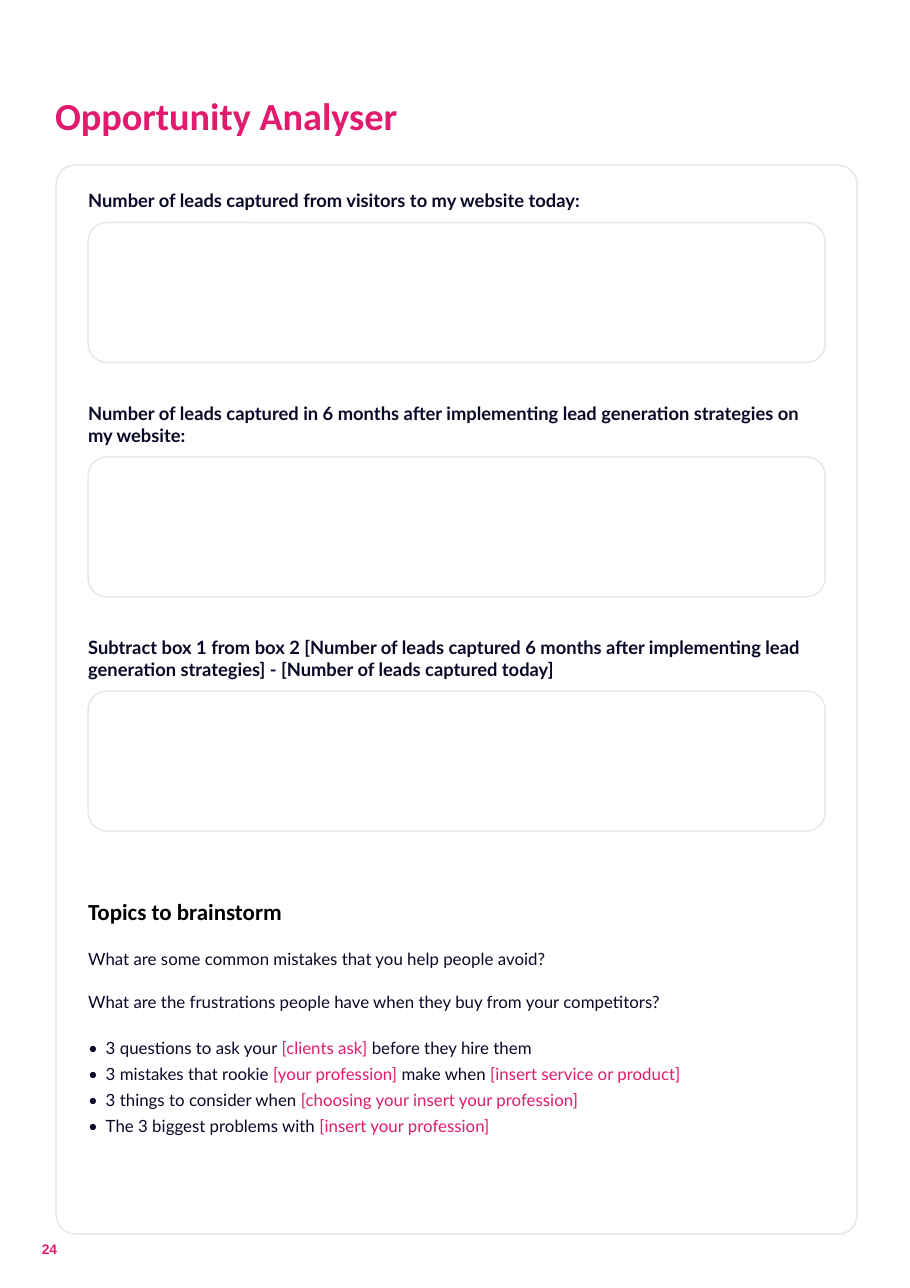
from dataclasses import dataclass

from lxml import etree
from pptx import Presentation
from pptx import util as u
from pptx.dml.color import RGBColor
from pptx.enum import shapes, text
from pptx.oxml.ns import qn

TITLE_ONLY = 5


@dataclass(frozen=True)
class Theme:
    pink: str = "E21B6F"
    navy: str = "080827"
    black: str = "000000"
    outline: str = "ECE6E6"
    heading_font: str = "Calibri"
    body_font: str = "Lato"
    number_font: str = "Arial"
    title_size: float = 25
    heading_size: float = 15
    label_size: float = 12
    body_size: float = 11
    number_size: float = 9
    corner: float = 0.17


THEME = Theme()

QUESTIONS = [
    "Number of leads captured from visitors to my website today:",
    "Number of leads captured in 6 months after implementing lead generation strategies on my website:",
    "Subtract box 1 from box 2 [Number of leads captured 6 months after implementing lead "
    "generation strategies] - [Number of leads captured today]",
]
PROMPTS = [
    "What are some common mistakes that you help people avoid?",
    "What are the frustrations people have when they buy from your competitors?",
]
# Plain and pink pieces alternate within each topic
TOPICS = [
    ["3 questions to ask your ", "[clients ask] ", "before they hire them"],
    ["3 mistakes that rookie ", "[your profession] ", "make when ", "[insert service or product]"],
    ["3 things to consider when ", "[choosing your insert your profession]"],
    ["The 3 biggest problems with ", "[insert your profession]"],
]


def add_bullet(paragraph, indent):
    properties = paragraph._p.get_or_add_pPr()
    properties.set("marL", str(u.Inches(indent)))
    properties.set("indent", str(-u.Inches(indent)))
    etree.SubElement(properties, qn("a:buFont")).set("typeface", THEME.body_font)
    etree.SubElement(properties, qn("a:buChar")).set("char", "•")


def write_text(frame, pieces, size, color, font=THEME.body_font, bold=False,
               before=0, bullet_indent=None, line_spacing=None):
    """Write one paragraph; every second piece takes the accent colour."""
    first = frame.paragraphs[0]
    paragraph = frame.add_paragraph() if first.runs else first
    if bullet_indent:
        add_bullet(paragraph, bullet_indent)
    paragraph.alignment = text.PP_ALIGN.LEFT
    paragraph.space_before = u.Pt(before)
    if line_spacing:
        paragraph.line_spacing = u.Pt(line_spacing)
    for index, piece in enumerate(pieces):
        run = paragraph.add_run()
        run.text = piece
        run.font.name = font
        run.font.size = u.Pt(size)
        run.font.bold = bold
        run.font.color.rgb = RGBColor.from_string(THEME.pink if index % 2 else color)


def prepare_frame(shape, anchor=text.MSO_ANCHOR.TOP, top_inset=0.02):
    frame = shape.text_frame
    frame.word_wrap = True
    frame.auto_size = text.MSO_AUTO_SIZE.NONE
    frame.vertical_anchor = anchor
    frame.margin_left = frame.margin_right = frame.margin_bottom = 0
    frame.margin_top = u.Inches(top_inset)
    return frame


def add_text_box(slide, left, top, width, height, **frame_format):
    box = slide.shapes.add_textbox(*map(u.Inches, (left, top, width, height)))
    return prepare_frame(box, **frame_format)


def add_rounded_box(slide, left, top, width, height):
    box = slide.shapes.add_shape(shapes.MSO_SHAPE.ROUNDED_RECTANGLE,
                                 *map(u.Inches, (left, top, width, height)))
    box.adjustments[0] = THEME.corner / min(width, height)
    box.shadow.inherit = False
    box.fill.background()
    box.line.color.rgb = RGBColor.from_string(THEME.outline)
    box.line.width = u.Pt(1)


def add_title(slide, left, top, width, height):
    title = slide.shapes.title
    title.left, title.top, title.width, title.height = map(u.Inches, (left, top, width, height))
    write_text(prepare_frame(title), ["Opportunity Analyser"], THEME.title_size, THEME.pink,
               font=THEME.heading_font, bold=True)


def add_questions(slide, left, top, width, height):
    """Equal rows, each with a label standing just above its answer box."""
    row_height = height / len(QUESTIONS)
    label_height, gap, answer_height = 0.43, 0.1, 1.27
    for row, question in enumerate(QUESTIONS):
        row_top = top + row * row_height
        label = add_text_box(slide, left, row_top, width, label_height,
                             anchor=text.MSO_ANCHOR.BOTTOM)
        write_text(label, [question], THEME.label_size, THEME.navy, bold=True)
        add_rounded_box(slide, left, row_top + label_height + gap, width, answer_height)


def add_topics(slide, left, top, width, height):
    frame = add_text_box(slide, left, top, width, height)
    write_text(frame, ["Topics to brainstorm"], THEME.heading_size, THEME.black,
               font=THEME.heading_font, bold=True)
    for prompt in PROMPTS:
        write_text(frame, [prompt], THEME.body_size, THEME.navy, before=14.9)
    for index, topic in enumerate(TOPICS):
        write_text(frame, topic, THEME.body_size, THEME.navy,
                   before=3.8 if index else 17, bullet_indent=0.16)


def add_page_number(slide, left, top, width, height):
    frame = add_text_box(slide, left, top, width, height, top_inset=0)
    write_text(frame, ["24"], THEME.number_size, THEME.pink, font=THEME.number_font,
               bold=True, line_spacing=9.2)


def main():
    presentation = Presentation()
    presentation.slide_width = u.Inches(8.26)
    presentation.slide_height = u.Inches(11.69)
    slide = presentation.slides.add_slide(presentation.slide_layouts[TITLE_ONLY])

    # Frame around the worksheet
    margin, frame_top, frame_width, frame_height = 0.51, 1.5, 7.27, 9.7
    add_rounded_box(slide, margin, frame_top, frame_width, frame_height)

    # Worksheet contents, inset equally from both sides of the frame
    padding = 0.29
    left, width = margin + padding, frame_width - 2 * padding
    add_title(slide, 0.5, 0.82, 5.47, 0.44)
    add_questions(slide, left, frame_top - 0.01, width, 6.38)
    add_topics(slide, left, 8.13, width, 2.21)

    # Page footer
    add_page_number(slide, 0.38, 11.28, 0.3, 0.15)
    presentation.save("out.pptx")


if __name__ == "__main__":
    main()
